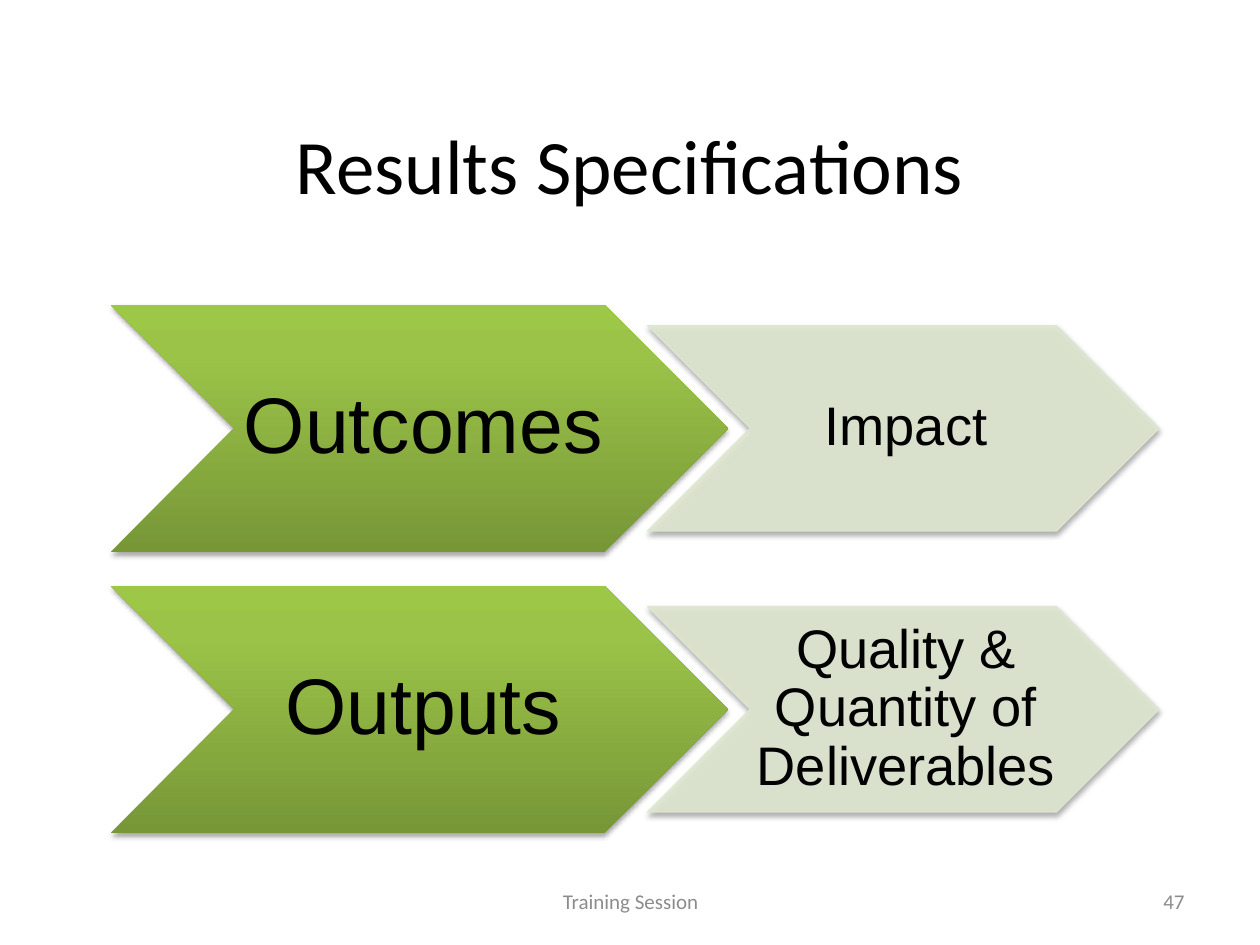
"""Build the Results Specifications slide: two rows of paired chevrons."""
from dataclasses import dataclass

from lxml.etree import SubElement
from pptx import Presentation
from pptx.dml.color import RGBColor
from pptx.enum.shapes import MSO_SHAPE
from pptx.enum.text import MSO_ANCHOR, PP_ALIGN
from pptx.oxml.ns import qn
from pptx.util import Inches, Pt


@dataclass(frozen=True)
class Theme:
    heading_font: str = "Calibri"
    body_font: str = "Arial"
    text: str = "000000"
    muted: str = "8C8C8C"
    pale: str = "DEE7D1"
    green: tuple = ((0, "779737"), (80, "9BC348"), (100, "9DC746"))
    title_size: int = 44
    result_size: int = 45
    detail_size: int = 31
    footer_size: int = 12


theme = Theme()


def write(s, text, font, size, color, align=PP_ALIGN.CENTER):
    tf = s.text_frame
    tf.word_wrap = True
    tf.vertical_anchor = MSO_ANCHOR.MIDDLE
    p = tf.paragraphs[0]
    p.alignment = align
    r = p.add_run()
    r.text = text
    r.font.name = font
    r.font.size = Pt(size)
    r.font.color.rgb = RGBColor.from_string(color)
    return tf


def add_chevron(slide, left, middle, width, height, text, size, inset):
    s = slide.shapes.add_shape(
        MSO_SHAPE.CHEVRON, Inches(left), Inches(middle - height / 2), Inches(width), Inches(height)
    )
    s.shadow.inherit = False
    effects = s._element.spPr.find(qn("a:effectLst"))
    shadow = SubElement(effects, qn("a:outerShdw"), blurRad=str(Pt(3.1)), dist=str(Pt(1.8)),
                        dir="5400000", rotWithShape="0")
    color = SubElement(shadow, qn("a:srgbClr"), val=theme.text)
    SubElement(color, qn("a:alpha"), val="35000")
    tf = write(s, text, theme.body_font, size, theme.text)
    tf.margin_left, tf.margin_right = Inches(inset), 0
    tf.margin_top = tf.margin_bottom = Inches(inset / 2)
    tf.paragraphs[0].line_spacing = 0.9
    return s


prs = Presentation()
prs.slide_width, prs.slide_height = Inches(10), Inches(7.5)
slide = prs.slides.add_slide(prs.slide_layouts[6])

labels = [
    (0.75, 0.67, 8.5, 1.25, "Results Specifications", theme.title_size, theme.text, PP_ALIGN.CENTER),
    (3.42, 6.95, 3.17, 0.4, "Training Session", theme.footer_size, theme.muted, PP_ALIGN.CENTER),
    (7.17, 6.95, 2.33, 0.4, "47", theme.footer_size, theme.muted, PP_ALIGN.RIGHT),
]
for left, top, width, height, text, size, color, align in labels:
    s = slide.shapes.add_textbox(Inches(left), Inches(top), Inches(width), Inches(height))
    write(s, text, theme.heading_font, size, color, align)

rows = [("Outcomes", "Impact"), ("Outputs", "Quality & Quantity of Deliverables")]
for i, (result, detail) in enumerate(rows):
    middle = 3.4 + i * 2.23

    s = add_chevron(slide, 0.88, middle, 4.9, 1.96, result, theme.result_size, 0.06)
    s.line.fill.background()
    s.fill.gradient()
    s.fill.gradient_angle = 90
    stops = s._element.spPr.find(qn("a:gradFill")).find(qn("a:gsLst"))
    stops.clear()
    for position, color in theme.green:
        stop = SubElement(stops, qn("a:gs"), pos=str(position * 1000))
        SubElement(stop, qn("a:srgbClr"), val=color)

    s = add_chevron(slide, 5.14, middle, 4.06, 1.63, detail, theme.detail_size, 0.04)
    s.fill.solid()
    s.line.width = Pt(0.75)
    for paint in (s.fill, s.line.fill):
        paint.solid()
        paint.fore_color.rgb = RGBColor.from_string(theme.pale)
    for color in s._element.spPr.findall(".//" + qn("a:solidFill") + "/" + qn("a:srgbClr")):
        SubElement(color, qn("a:alpha"), val="90000")

prs.save("out.pptx")
